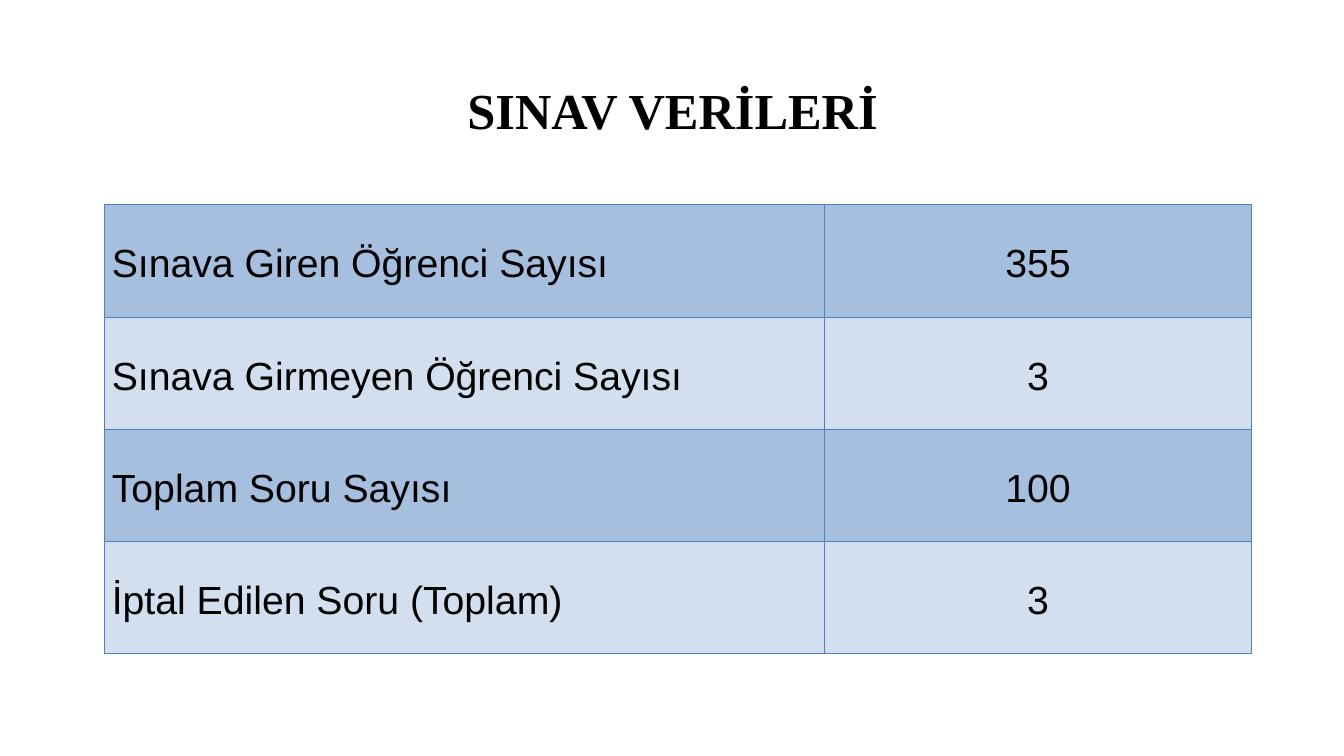
from lxml.etree import SubElement
from pptx import Presentation
from pptx.dml.color import RGBColor
from pptx.enum.text import MSO_ANCHOR, PP_ALIGN
from pptx.oxml.ns import qn
from pptx.util import Inches, Pt

BLACK = RGBColor(0x00, 0x00, 0x00)
BORDER_BLUE = RGBColor(0x4F, 0x81, 0xBD)
BAND_COLOURS = (RGBColor(0xA7, 0xBF, 0xDE), RGBColor(0xD3, 0xDF, 0xEE))

SLIDE_WIDTH, SLIDE_HEIGHT = Inches(13.33), Inches(7.5)
TITLE_BOX = (0.069, 0.053, 0.863, 0.193)  # shares of the slide's size
TABLE_BOX = (0.078, 0.271, 0.853, 0.594)
LABEL_SHARE = 0.628

EXAM_FIGURES = (
    ("Sınava Giren Öğrenci Sayısı", "355"),
    ("Sınava Girmeyen Öğrenci Sayısı", "3"),
    ("Toplam Soru Sayısı", "100"),
    ("İptal Edilen Soru (Toplam)", "3"),
)


def to_slide_lengths(box):
    left, top, width, height = box
    return (int(left * SLIDE_WIDTH), int(top * SLIDE_HEIGHT),
            int(width * SLIDE_WIDTH), int(height * SLIDE_HEIGHT))


def format_paragraph(paragraph, font_name, size, align, spacing, bold=False):
    paragraph.alignment = align
    paragraph.line_spacing = spacing
    for run in paragraph.runs:
        run.font.name = font_name
        run.font.size = Pt(size)
        run.font.bold = bold
        run.font.color.rgb = BLACK


def add_cell_borders(cell):
    properties = cell._tc.get_or_add_tcPr()
    for position, side in enumerate(("lnL", "lnR", "lnT", "lnB")):
        line = SubElement(properties, qn(f"a:{side}"), w=str(Pt(1)))
        fill = SubElement(line, qn("a:solidFill"))
        SubElement(fill, qn("a:srgbClr"), val=str(BORDER_BLUE))
        properties.insert(position, line)


def place_title(slide, box):
    title = slide.shapes.title
    title.left, title.top, title.width, title.height = box
    title.text_frame.text = "SINAV VERİLERİ"
    title.text_frame.vertical_anchor = MSO_ANCHOR.MIDDLE
    format_paragraph(title.text_frame.paragraphs[0], "Times New Roman", 36,
                     PP_ALIGN.CENTER, 0.9, bold=True)


def fill_cell(cell, text, align, colour):
    cell.text_frame.text = text
    cell.vertical_anchor = MSO_ANCHOR.MIDDLE
    cell.margin_left = cell.margin_right = Inches(0.07)
    cell.margin_top = cell.margin_bottom = 0
    cell.fill.solid()
    cell.fill.fore_color.rgb = colour
    format_paragraph(cell.text_frame.paragraphs[0], "Arial", 28, align, 1.15)
    add_cell_borders(cell)


def place_figures_table(slide, box):
    left, top, width, height = box
    figures = slide.shapes.add_table(len(EXAM_FIGURES), 2, left, top, width, height).table
    figures.first_row = figures.horz_banding = False
    figures.columns[0].width = int(width * LABEL_SHARE)
    figures.columns[1].width = width - figures.columns[0].width
    for row, (label, count) in enumerate(EXAM_FIGURES):
        colour = BAND_COLOURS[row % 2]
        fill_cell(figures.cell(row, 0), label, PP_ALIGN.LEFT, colour)
        fill_cell(figures.cell(row, 1), count, PP_ALIGN.CENTER, colour)


def main():
    presentation = Presentation()
    presentation.slide_width, presentation.slide_height = SLIDE_WIDTH, SLIDE_HEIGHT
    slide = presentation.slides.add_slide(presentation.slide_layouts[5])
    place_title(slide, to_slide_lengths(TITLE_BOX))
    place_figures_table(slide, to_slide_lengths(TABLE_BOX))
    presentation.save("out.pptx")


if __name__ == "__main__":
    main()
